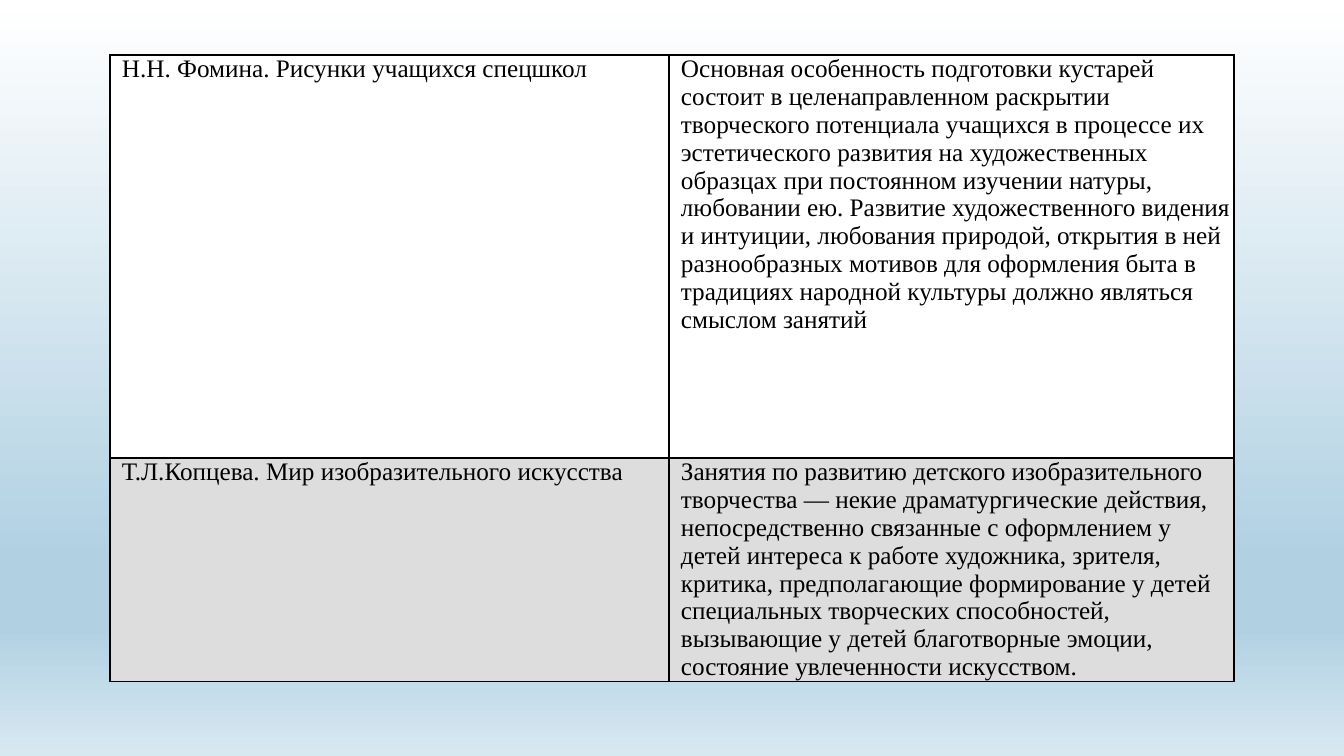
import pptx
import pptx.dml.color
import pptx.oxml.ns
import pptx.util
from lxml import etree

COLORS = {
    "text": "000000",
    "border": "000000",
    "white": "FFFFFF",
    "grey": "DDDDDD",
    "blue": "B1D1E3",
    "pale": "D8E8F1",
}
BACKGROUND_STOPS = [(0, "white"), (74, "blue"), (83, "blue"), (100, "pale")]
ROW_FILLS = ["white", "grey"]
PROGRAMS = [
    (
        "Н.Н. Фомина. Рисунки учащихся спецшкол",
        "Основная особенность подготовки кустарей состоит в целенаправленном "
        "раскрытии творческого потенциала учащихся в процессе их эстетического "
        "развития на художественных образцах при постоянном изучении натуры, "
        "любовании ею. Развитие художественного видения и интуиции, любования "
        "природой, открытия в ней разнообразных мотивов для оформления быта в "
        "традициях народной культуры должно являться смыслом занятий",
    ),
    (
        "Т.Л.Копцева. Мир изобразительного искусства",
        "Занятия по развитию детского изобразительного творчества — некие "
        "драматургические действия, непосредственно связанные с оформлением у "
        "детей интереса к работе художника, зрителя, критика, предполагающие "
        "формирование у детей специальных творческих способностей, вызывающие "
        "у детей благотворные эмоции, состояние увлеченности искусством.",
    ),
]


def px(length):
    return pptx.util.Emu(round(length * 914400 / 100.8))


def add_element(parent, tag, **attributes):
    return etree.SubElement(parent, pptx.oxml.ns.qn(tag), **attributes)


class SlideBuilder:
    font_name = "Times New Roman"
    font_size = pptx.util.Pt(18)
    border_width = pptx.util.Pt(1)
    indent = 11
    side_margin = 1

    def __init__(self, slide):
        self.slide = slide

    def gradient_background(self, stops):
        fill = self.slide.background.fill
        fill.gradient()
        fill.gradient_angle = 270
        stop_list = self.slide.element.find(".//" + pptx.oxml.ns.qn("a:gsLst"))
        for stop in list(stop_list):
            stop_list.remove(stop)
        for position, color in stops:
            stop = add_element(stop_list, "a:gs", pos=str(position * 1000))
            add_element(stop, "a:srgbClr", val=COLORS[color])

    def table(self, left, top, column_widths, row_heights, rows, row_fills):
        frame = self.slide.shapes.add_table(
            len(row_heights), len(column_widths), px(left), px(top),
            px(sum(column_widths)), px(sum(row_heights)),
        )
        table = frame.table
        table.first_row = False
        table.horz_banding = False
        for column, width in zip(table.columns, column_widths):
            column.width = px(width)
        for row, height, texts, fill in zip(table.rows, row_heights, rows, row_fills):
            row.height = px(height)
            for cell, text in zip(row.cells, texts):
                self.cell(cell, text, fill)

    def cell(self, cell, text, fill):
        cell.margin_left = cell.margin_right = px(self.side_margin)
        cell.margin_top = cell.margin_bottom = 0
        self.borders(cell)
        cell.fill.solid()
        cell.fill.fore_color.rgb = pptx.dml.color.RGBColor.from_string(COLORS[fill])
        cell.text_frame.text = text
        paragraph = cell.text_frame.paragraphs[0]
        paragraph._p.get_or_add_pPr().set("marL", str(px(self.indent)))
        font = paragraph.runs[0].font
        font.name = self.font_name
        font.size = self.font_size
        font.color.rgb = pptx.dml.color.RGBColor.from_string(COLORS["text"])

    def borders(self, cell):
        properties = cell._tc.get_or_add_tcPr()
        for tag in ("a:lnL", "a:lnR", "a:lnT", "a:lnB"):
            line = add_element(properties, tag, w=str(self.border_width))
            fill = add_element(line, "a:solidFill")
            add_element(fill, "a:srgbClr", val=COLORS["border"])


def main():
    presentation = pptx.Presentation()
    presentation.slide_width = px(1344)
    presentation.slide_height = px(756)
    slide = presentation.slides.add_slide(presentation.slide_layouts[6])
    builder = SlideBuilder(slide)
    builder.gradient_background(BACKGROUND_STOPS)
    builder.table(110, 55, [559, 565], [403, 178], PROGRAMS, ROW_FILLS)
    presentation.save("out.pptx")


if __name__ == "__main__":
    main()
